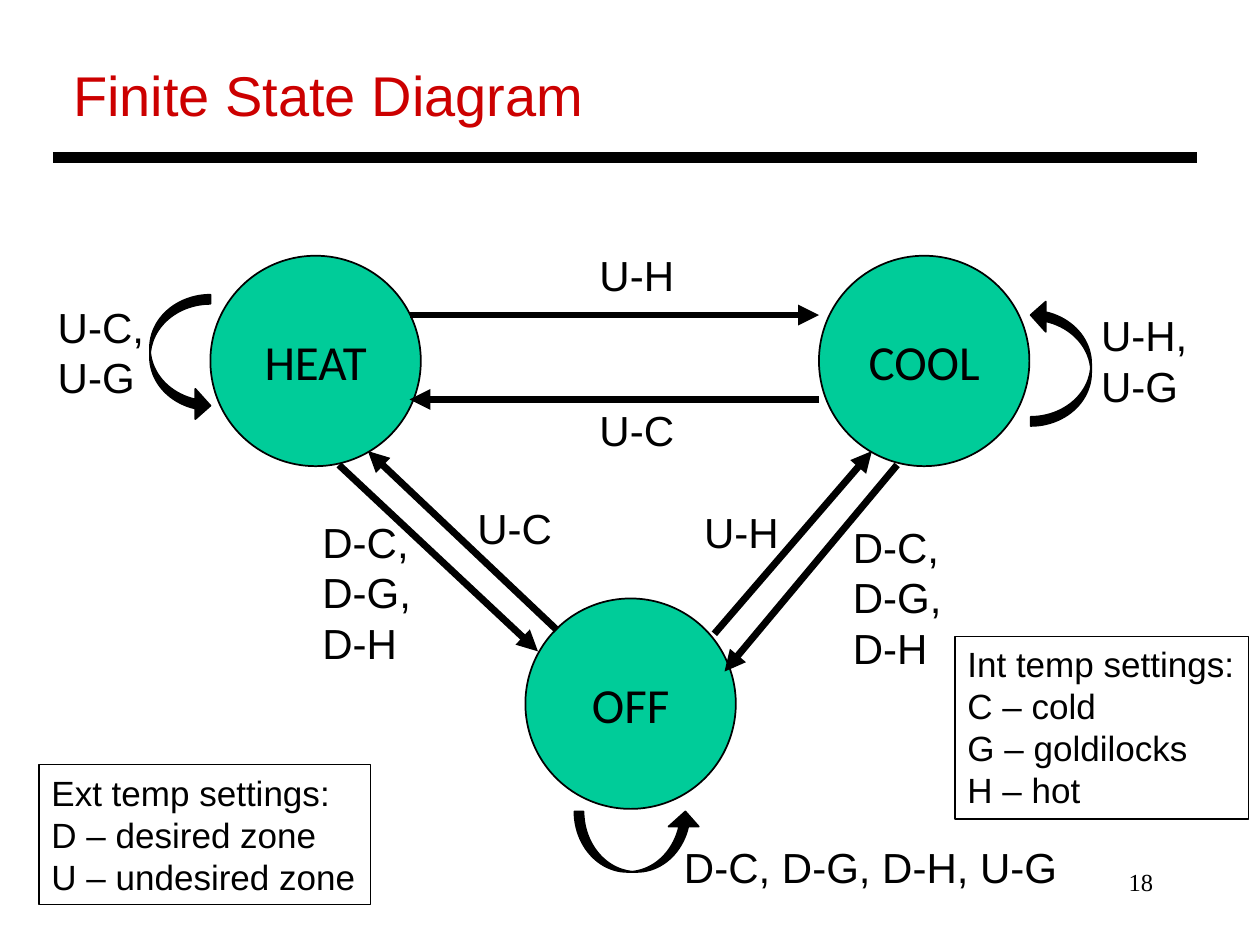
from lxml import etree
from pptx import Presentation
from pptx.dml.color import RGBColor
from pptx.enum.shapes import MSO_CONNECTOR, MSO_SHAPE
from pptx.enum.text import MSO_ANCHOR, PP_ALIGN
from pptx.oxml.ns import qn
from pptx.util import Inches, Pt

LEFT, CENTER, RIGHT = PP_ALIGN.LEFT, PP_ALIGN.CENTER, PP_ALIGN.RIGHT
TOP, MIDDLE = MSO_ANCHOR.TOP, MSO_ANCHOR.MIDDLE
STRAIGHT = MSO_CONNECTOR.STRAIGHT
CIRCLE, BOX, LOOP = MSO_SHAPE.OVAL, MSO_SHAPE.RECTANGLE, MSO_SHAPE.CURVED_RIGHT_ARROW
BLACK, RED, GREEN = "000000", "CC0000", "00CC99"
color = RGBColor.from_string


def write(shape, lines, size, font="Arial", ink=BLACK, align=LEFT, anchor=TOP, wrap=False):
    frame = shape.text_frame
    frame.word_wrap = wrap
    frame.vertical_anchor = anchor
    for i, line in enumerate(lines):
        paragraph = frame.add_paragraph() if i else frame.paragraphs[0]
        paragraph.alignment = align
        run = paragraph.add_run()
        run.text = line
        run.font.size = Pt(size)
        run.font.name = font
        run.font.color.rgb = color(ink)


def draw_line(x1, y1, x2, y2, width, arrow=True):
    line = slide.shapes.add_connector(STRAIGHT, Inches(x1), Inches(y1), Inches(x2), Inches(y2))
    line.line.color.rgb = color(BLACK)
    line.line.width = Pt(width)
    if arrow:
        etree.SubElement(line.line._get_or_add_ln(), qn("a:tailEnd"), type="triangle")
    etree.SubElement(line._element.spPr, qn("a:effectLst"))


prs = Presentation()
prs.slide_width, prs.slide_height = Inches(10), Inches(7.5)
slide = prs.slides.add_slide(prs.slide_layouts[5])

# Title, rule and page number
title = slide.shapes.title
title.left, title.top, title.width, title.height = map(Inches, (0.48, 0.43, 9, 0.64))
write(title, ["Finite State Diagram"], 32, ink=RED, wrap=True)
draw_line(0.42, 1.25, 9.5, 1.25, 6, arrow=False)
page_number = slide.shapes.add_textbox(Inches(7.17), Inches(6.83), Inches(2.08), Inches(0.5))
write(page_number, ["18"], 14, "Times New Roman", align=RIGHT, wrap=True)

# States
for name, x, y in [("HEAT", 1.67, 2.03), ("COOL", 6.5, 2.03), ("OFF", 4.17, 4.75)]:
    state = slide.shapes.add_shape(CIRCLE, Inches(x), Inches(y), Inches(1.67), Inches(1.67))
    state.shadow.inherit = False
    state.fill.solid()
    state.fill.fore_color.rgb = color(GREEN)
    state.line.color.rgb = color(BLACK)
    state.line.width = Pt(1)
    write(state, [name], 28, "Calibri", align=CENTER, anchor=MIDDLE)

# Transitions between states
for ends in [
    (3.25, 2.5, 6.5, 2.5),
    (6.5, 3.17, 3.25, 3.17),
    (4.42, 5, 2.92, 3.58),
    (5.67, 5.03, 6.92, 3.58),
    (7.12, 3.69, 5.75, 5.33),
    (2.69, 3.69, 4.27, 5.17),
]:
    draw_line(*ends, 4)

# Transitions back to the same state
for x, y, rotation in [(4.82, 6.18, 270), (8.18, 2.38, 180), (1.19, 2.34, 0)]:
    loop = slide.shapes.add_shape(LOOP, Inches(x), Inches(y), Inches(0.48), Inches(1))
    loop.rotation = rotation
    loop.adjustments[0] = 0.15
    loop.shadow.inherit = False
    loop.fill.solid()
    loop.fill.fore_color.rgb = color(BLACK)
    loop.line.color.rgb = color(BLACK)
    loop.line.width = Pt(1)

# Transition labels
for lines, x, y, width, height in [
    (["U-H"], 4.66, 1.93, 0.8, 0.51),
    (["U-C"], 4.66, 3.16, 0.8, 0.51),
    (["U-C"], 3.69, 3.94, 0.8, 0.51),
    (["U-H"], 5.49, 3.97, 0.8, 0.5),
    (["D-C,", "D-G,", "D-H"], 2.46, 4.05, 0.91, 1.31),
    (["D-C,", "D-G,", "D-H"], 6.67, 4.09, 0.91, 1.31),
    (["U-C,", "U-G"], 0.36, 2.34, 0.89, 0.91),
    (["U-H,", "U-G"], 8.64, 2.41, 0.9, 0.91),
    (["D-C, D-G, D-H, U-G"], 5.33, 6.63, 3.19, 0.5),
]:
    label = slide.shapes.add_textbox(Inches(x), Inches(y), Inches(width), Inches(height))
    write(label, lines, 24)

# Legends
for lines, x, y, width, height in [
    (["Ext temp settings:", "D – desired zone", "U – undesired zone"], 0.31, 6.07, 2.63, 1.11),
    (["Int temp settings:", "C – cold", "G – goldilocks", "H – hot"], 7.58, 5.05, 2.33, 1.45),
]:
    legend = slide.shapes.add_shape(BOX, Inches(x), Inches(y), Inches(width), Inches(height))
    legend.shadow.inherit = False
    legend.fill.background()
    legend.line.color.rgb = color(BLACK)
    legend.line.width = Pt(0.75)
    write(legend, lines, 20)

prs.save("out.pptx")
